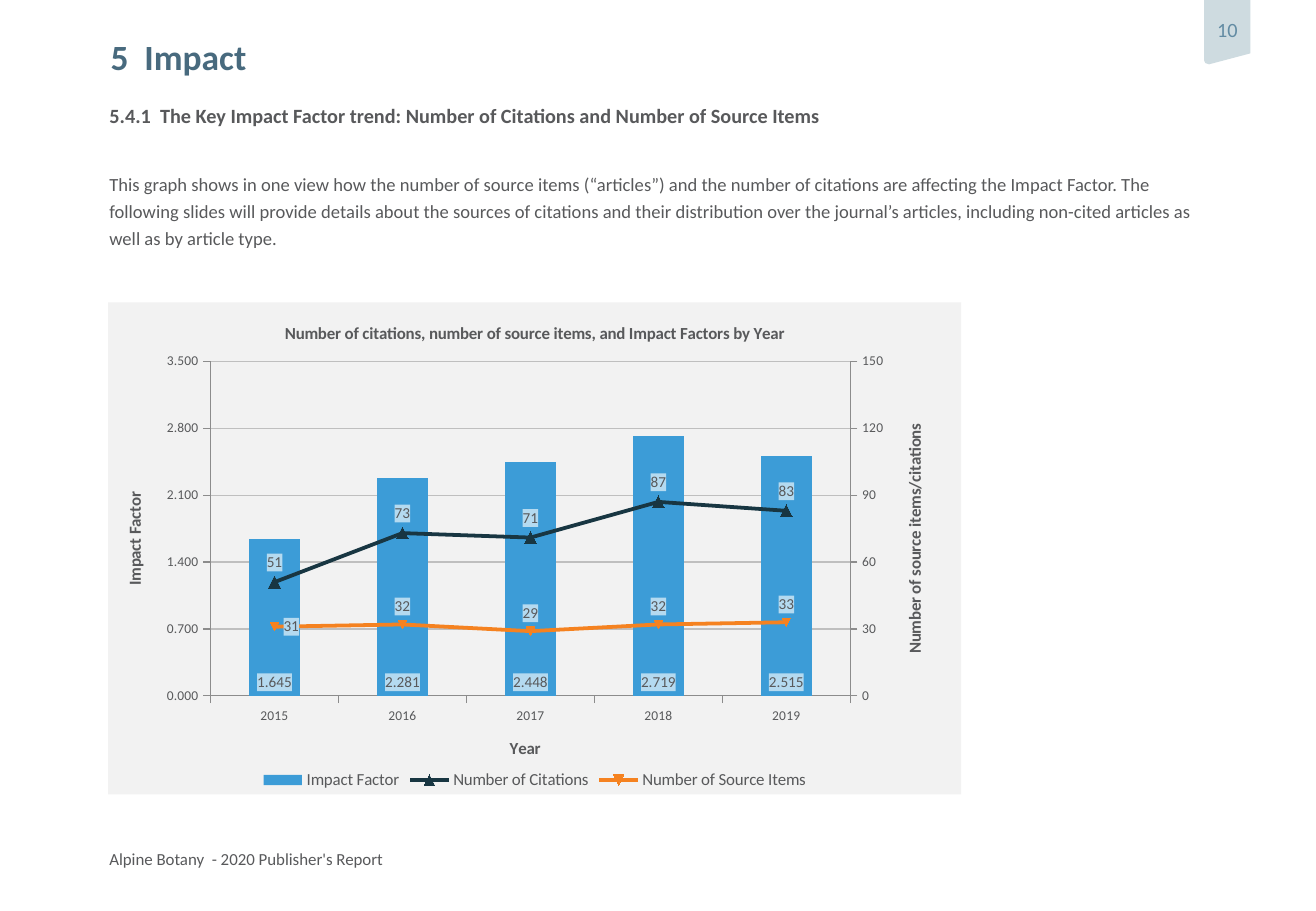
from copy import deepcopy

from lxml import etree
from pptx import Presentation
from pptx.chart.axis import ValueAxis
from pptx.chart.data import CategoryChartData
from pptx.dml.color import RGBColor
from pptx.enum.chart import (XL_CHART_TYPE, XL_LABEL_POSITION, XL_LEGEND_POSITION,
                             XL_MARKER_STYLE, XL_TICK_MARK)
from pptx.enum.text import MSO_ANCHOR, PP_ALIGN
from pptx.oxml import parse_xml
from pptx.oxml.ns import nsdecls, qn
from pptx.util import Inches, Pt

COLUMN = XL_CHART_TYPE.COLUMN_CLUSTERED
ABOVE, RIGHT, BASE = (XL_LABEL_POSITION.ABOVE, XL_LABEL_POSITION.RIGHT,
                      XL_LABEL_POSITION.INSIDE_BASE)
BOTTOM = XL_LEGEND_POSITION.BOTTOM
TRIANGLE, AUTO = XL_MARKER_STYLE.TRIANGLE, XL_MARKER_STYLE.AUTOMATIC
OUT, NONE = XL_TICK_MARK.OUTSIDE, XL_TICK_MARK.NONE
TOP, MIDDLE = MSO_ANCHOR.TOP, MSO_ANCHOR.MIDDLE
LEFT, CENTER = PP_ALIGN.LEFT, PP_ALIGN.CENTER

HEX = {"text": "58595B", "title": "486A7E", "tag": "CEDBE0", "page": "628BA3",
       "panel": "F2F2F2", "grid": "BFBFBF", "axis": "8C8C8C", "label": "B4DAF0",
       "factor": "3C9CD7", "cites": "183642", "items": "F58220"}
RGB = {name: RGBColor.from_string(code) for name, code in HEX.items()}


def style(font, size, color="text", bold=False):
    font.name, font.size, font.bold = "Calibri", Pt(size), bold
    font.color.rgb = RGB[color]


def write(shape, box, text, size, color="text", bold=False, spacing=1.0):
    """Place a text shape without margins and fill it with one paragraph."""
    shape.left, shape.top, shape.width, shape.height = [Inches(n) for n in box]
    frame = shape.text_frame
    frame.margin_left = frame.margin_right = frame.margin_top = frame.margin_bottom = 0
    frame.word_wrap, frame.vertical_anchor = True, TOP
    frame.text = text
    para = frame.paragraphs[0]
    para.alignment, para.line_spacing = LEFT, spacing
    para.space_before = Pt(0)
    style(para.runs[0].font, size, color, bold)
    return para


deck = Presentation()
deck.slide_width, deck.slide_height = Inches(10.83), Inches(7.5)
slide = deck.slides.add_slide(deck.slide_layouts[1])
shapes = slide.shapes

# Page tag and footer
corners = [(10.29, 0), (10.29, 0.44), (9.95, 0.53), (9.92, 0.52), (9.91, 0.5)]
outline = shapes.build_freeform(Inches(9.91), 0)
outline.add_line_segments([(Inches(x), Inches(y)) for x, y in corners])
tag = outline.convert_to_shape()
tag.shadow.inherit = False
tag.fill.solid()
tag.fill.fore_color.rgb = RGB["tag"]
tag.line.fill.background()
page = write(tag, (9.91, 0, 0.38, 0.53), "10", 12, "page")
page.alignment = CENTER
tag.text_frame.vertical_anchor = MIDDLE
tag.text_frame.margin_bottom = Inches(0.04)

foot = shapes.add_textbox(0, 0, 0, 0)
write(foot, (0.9, 6.99, 4, 0.17), "Alpine Botany  - 2020 Publisher's Report", 10)

# Headings and introduction
write(shapes.title, (0.91, 0.33, 9.01, 0.41), "5  Impact", 21, "title", True, 0.9)
head = shapes.add_textbox(0, 0, 0, 0)
write(head, (0.9, 0.85, 9.01, 0.41),
      "5.4.1  The Key Impact Factor trend: Number of Citations and Number of Source Items",
      12, bold=True)
intro = write(
    slide.placeholders[1], (0.9, 1.39, 9.01, 0.65),
    "This graph shows in one view how the number of source items (“articles”) and the "
    "number of citations are affecting the Impact Factor. The following slides will "
    "provide details about the sources of citations and their distribution over the "
    "journal’s articles, including non-cited articles as well as by article type.",
    11, spacing=1.2)
intro.space_after = Pt(4)
props = intro._p.get_or_add_pPr()
props.set("marL", "0")
props.set("indent", "0")
etree.SubElement(props, qn("a:buNone"))

# Chart with columns
data = CategoryChartData()
data.categories = ["2015", "2016", "2017", "2018", "2019"]
data.add_series("Impact Factor", (1.645, 2.281, 2.448, 2.719, 2.515), "0.000")
data.add_series("Number of Citations", (51, 73, 71, 87, 83), "0")
data.add_series("Number of Source Items", (31, 32, 29, 32, 33), "0")
chart = shapes.add_chart(COLUMN, Inches(0.89), Inches(2.49), Inches(7.02),
                         Inches(4.05), data).chart
style(chart.font, 10)
chart.has_title = True
chart.chart_title.include_in_layout = False
heading = chart.chart_title.text_frame
heading.text = "Number of citations, number of source items, and Impact Factors by Year"
style(heading.paragraphs[0].runs[0].font, 10, bold=True)
chart.has_legend = True
chart.legend.position = BOTTOM
chart.legend.include_in_layout = False
style(chart.legend.font, 10)

years, factor = chart.category_axis, chart.value_axis
for axis in (years, factor):
    axis.major_tick_mark, axis.minor_tick_mark = OUT, NONE
    axis.format.line.color.rgb = RGB["axis"]
    axis.format.line.width = Pt(0.75)
    style(axis.tick_labels.font, 8)
factor.has_major_gridlines = True
factor.major_gridlines.format.line.color.rgb = RGB["grid"]
factor.major_gridlines.format.line.width = Pt(0.75)

# Second pair of axes, with the counts as lines
space = chart._chartSpace
area = space.find(".//" + qn("c:plotArea"))
bars = area.find(qn("c:barChart"))
lines = parse_xml(
    f'<c:lineChart {nsdecls("c")}><c:grouping val="standard"/><c:varyColors val="0"/>'
    '<c:marker val="1"/><c:axId val="501"/><c:axId val="502"/></c:lineChart>')
for ser in bars.findall(qn("c:ser"))[1:]:
    for flag in ser.findall(qn("c:invertIfNegative")):
        ser.remove(flag)
    lines.find(qn("c:marker")).addprevious(ser)
bars.addnext(lines)

last = area.find(qn("c:valAx"))
for kind, own, other in (("c:valAx", "502", "501"), ("c:catAx", "501", "502")):
    twin = deepcopy(area.find(qn(kind)))
    twin.find(qn("c:axId")).set("val", own)
    twin.find(qn("c:crossAx")).set("val", other)
    last.addnext(twin)
    last = twin
last.find(qn("c:delete")).set("val", "1")
count = area.findall(qn("c:valAx"))[1]
count.find(qn("c:axPos")).set("val", "r")
count.find(qn("c:crosses")).set("val", "max")
right = ValueAxis(count)
right.has_major_gridlines = False

for axis, top, step, form in ((factor, 3.5, 0.7, "0.000"), (right, 150, 30, "0")):
    axis.minimum_scale, axis.maximum_scale, axis.major_unit = 0, top, step
    axis.tick_labels.number_format = form
    axis.tick_labels.number_format_is_linked = False
for axis, text in ((years, "Year"), (factor, "Impact Factor"),
                   (right, "Number of source items/citations")):
    frame = axis.axis_title.text_frame
    frame.text = text
    style(frame.paragraphs[0].runs[0].font, 10, bold=True)
    if axis is not years:
        turn = frame._txBody.find(qn("a:bodyPr"))
        turn.set("rot", "-5400000")
        turn.set("vert", "horz")

# Series colours and labels
columns, curves = chart.plots
columns.gap_width = 150
columns.vary_by_categories = False
impact = columns.series[0]
impact.format.fill.solid()
impact.format.fill.fore_color.rgb = RGB["factor"]
cites, items = curves.series
for series, color, mark, size in ((cites, "cites", TRIANGLE, 7), (items, "items", AUTO, 5)):
    series.smooth = False
    series.format.line.color.rgb = RGB[color]
    series.format.line.width = Pt(2.25)
    series.marker.style, series.marker.size = mark, size
    series.marker.format.fill.solid()
    series.marker.format.fill.fore_color.rgb = RGB[color]
    series.marker.format.line.color.rgb = RGB[color]
for series, spot, form in ((impact, BASE, "0.000"), (cites, ABOVE, "0"), (items, ABOVE, "0")):
    labels = series.data_labels
    labels.show_value, labels.position = True, spot
    labels.number_format, labels.number_format_is_linked = form, False
    style(labels.font, 9)
first = items.points[0].data_label
style(first.font, 9)
first.position = RIGHT

# Fills and plot area
fill = (f'<c:spPr {nsdecls("c", "a")}><a:solidFill><a:srgbClr val="%s"/></a:solidFill>'
        '<a:ln><a:noFill/></a:ln></c:spPr>')
for text in space.xpath(".//c:dLbls/c:txPr | .//c:dLbl/c:txPr"):
    for old in text.getparent().findall(qn("c:spPr")):
        text.getparent().remove(old)
    text.addprevious(parse_xml(fill % HEX["label"]))
area.append(parse_xml(fill % HEX["panel"]))
space.find(qn("c:chart")).addnext(parse_xml(fill % HEX["panel"]))
for old in area.findall(qn("c:layout")):
    area.remove(old)
spots = "".join(f'<c:{name} val="{val}"/>' for name, val in (
    ("layoutTarget", "inner"), ("xMode", "edge"), ("yMode", "edge"),
    ("x", 0.12), ("y", 0.12), ("w", 0.75), ("h", 0.68)))
area.insert(0, parse_xml(f'<c:layout {nsdecls("c")}><c:manualLayout>{spots}'
                         '</c:manualLayout></c:layout>'))

deck.save("out.pptx")
